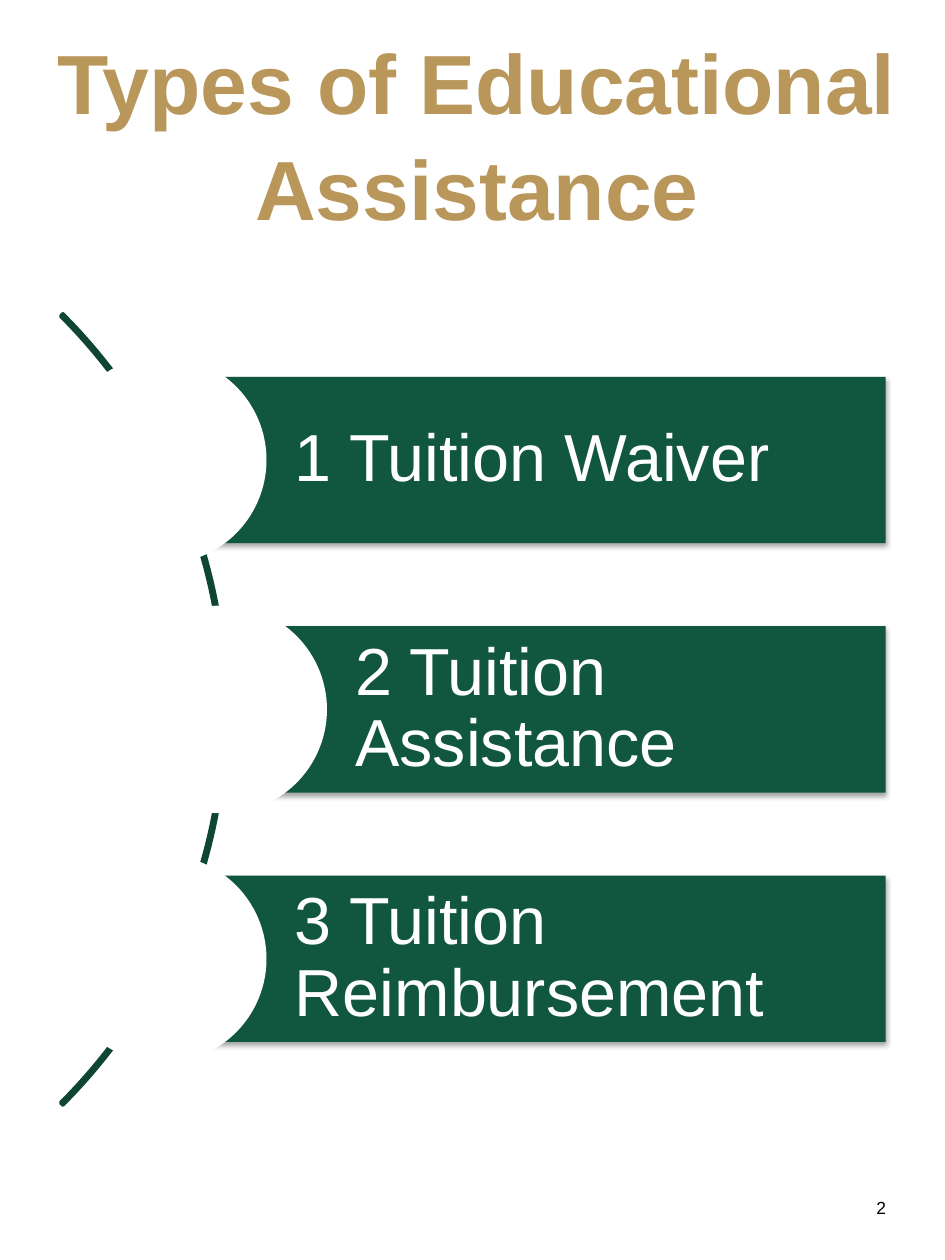
from lxml.etree import SubElement
from pptx import Presentation
from pptx.dml.color import RGBColor
from pptx.enum.shapes import MSO_SHAPE as Shape
from pptx.enum.text import MSO_ANCHOR as Anchor, PP_ALIGN as Align
from pptx.oxml.ns import qn
from pptx.util import Inches, Pt

GOLD, GREEN, DARK_GREEN = "B9975B", "115740", "0E4633"
WHITE, BLACK = "FFFFFF", "000000"
BAR_RIGHT, BAR_HEIGHT, BADGE = 7.03, 1.32, 1.65
FIRST_TOP, PITCH = 2.99, 1.98
TYPES = [
    ("1 Tuition Waiver", 1.29),
    ("2 Tuition Assistance", 1.77),
    ("3 Tuition Reimbursement", 1.29),
]


def color(value):
    return RGBColor.from_string(value)


def set_values(target, values):
    for name, value in values.items():
        setattr(target, name, value)


def write(frame, text, size, hue, align, frame_format, spacing=1.0, bold=False):
    set_values(frame, {"word_wrap": True, **frame_format})
    line = frame.paragraphs[0]
    set_values(line, {"text": text, "alignment": align, "line_spacing": spacing})
    set_values(line.font, {"name": "Arial", "size": Pt(size), "bold": bold})
    line.font.color.rgb = color(hue)


def add_label(slide, box, *text_format, **options):
    label = slide.shapes.add_textbox(*map(Inches, box))
    write(label.text_frame, *text_format, **options)


def add_plain(slide, kind, box, fill=None):
    plain = slide.shapes.add_shape(kind, *map(Inches, box))
    plain.shadow.inherit = False
    plain.line.fill.background()
    if fill:
        plain.fill.solid()
        plain.fill.fore_color.rgb = color(fill)
    else:
        plain.fill.background()
    return plain


def add_shadow(bar):
    effects = bar.element.spPr.find(qn("a:effectLst"))
    shadow = SubElement(effects, qn("a:outerShdw"), blurRad=str(Pt(3.1)),
                        dist=str(Pt(1.8)), dir="5400000", rotWithShape="0")
    tint = SubElement(shadow, qn("a:srgbClr"), val=BLACK)
    SubElement(tint, qn("a:alpha"), val="35000")


def add_arc(slide):
    arc = add_plain(slide, Shape.BLOCK_ARC, (-7.08, 1.19, 8.88, 8.88))
    for index, value in enumerate((189, 27, 0.003)):
        arc.adjustments[index] = value
    arc.line.color.rgb = color(DARK_GREEN)
    arc.line.width = Pt(2)


def add_type(slide, text, left, top):
    bar = add_plain(slide, Shape.RECTANGLE,
                    (left, top, BAR_RIGHT - left, BAR_HEIGHT), GREEN)
    add_shadow(bar)
    margins = {f"margin_{side}": Inches(0.11) for side in ("top", "right", "bottom")}
    write(bar.text_frame, text, 38, WHITE, Align.LEFT,
          {**margins, "margin_left": Inches(1.05), "vertical_anchor": Anchor.MIDDLE},
          spacing=0.9)
    badge_top = top + (BAR_HEIGHT - BADGE) / 2
    add_plain(slide, Shape.OVAL, (left - BADGE / 2, badge_top, BADGE, BADGE), WHITE)


def main():
    deck = Presentation()
    set_values(deck, {"slide_width": Inches(7.5), "slide_height": Inches(10)})
    slide = deck.slides.add_slide(deck.slide_layouts[6])
    add_label(slide, (5.62, 9.45, 1.51, 0.27), "2", 10, BLACK, Align.RIGHT, {})
    add_label(slide, (0.28, 0.4, 7.01, 1.28), "Types of Educational Assistance",
              48, GOLD, Align.CENTER, {"vertical_anchor": Anchor.MIDDLE},
              spacing=1.05, bold=True)
    add_arc(slide)
    for row, (text, left) in enumerate(TYPES):
        add_type(slide, text, left, FIRST_TOP + row * PITCH)
    deck.save("out.pptx")


if __name__ == "__main__":
    main()
